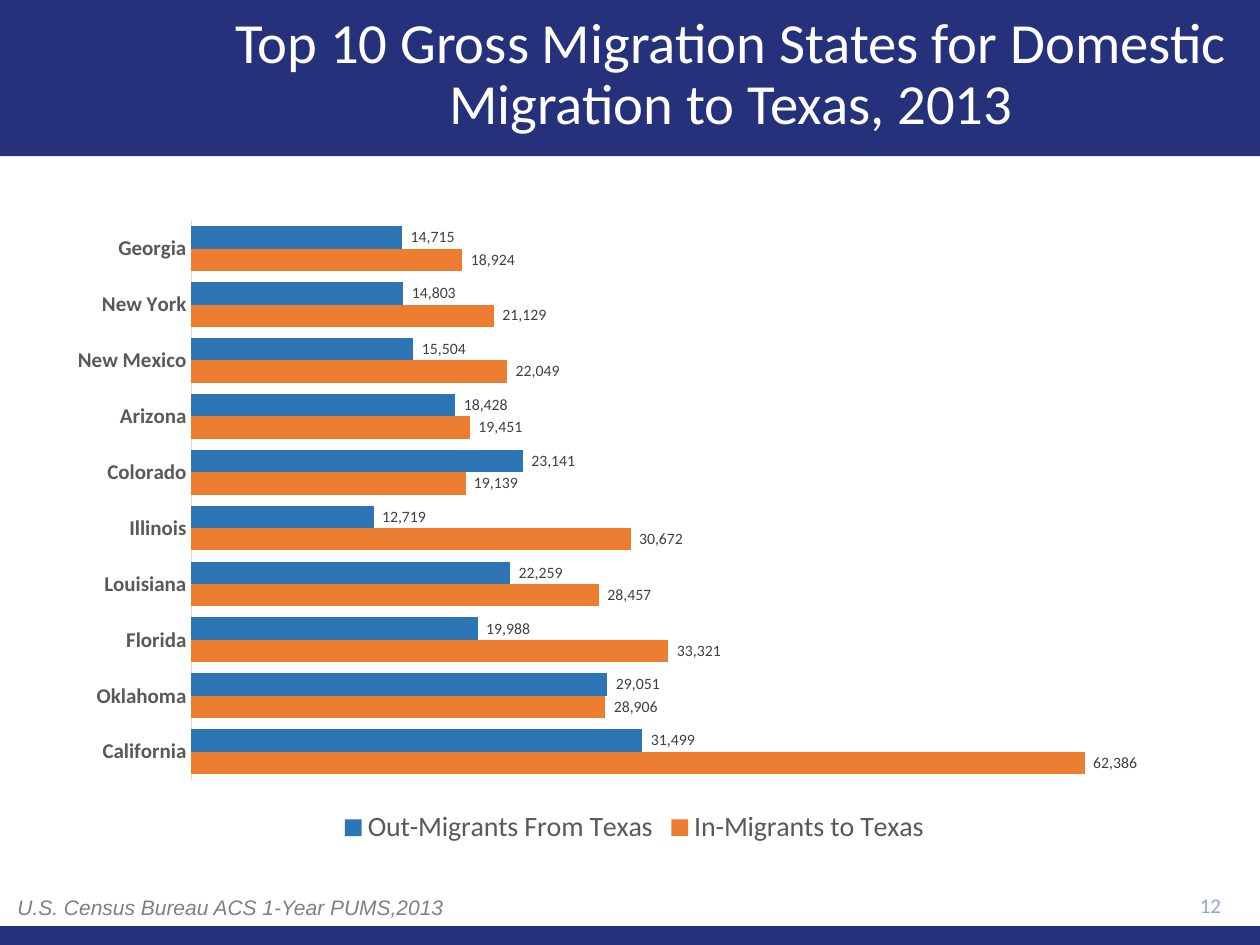
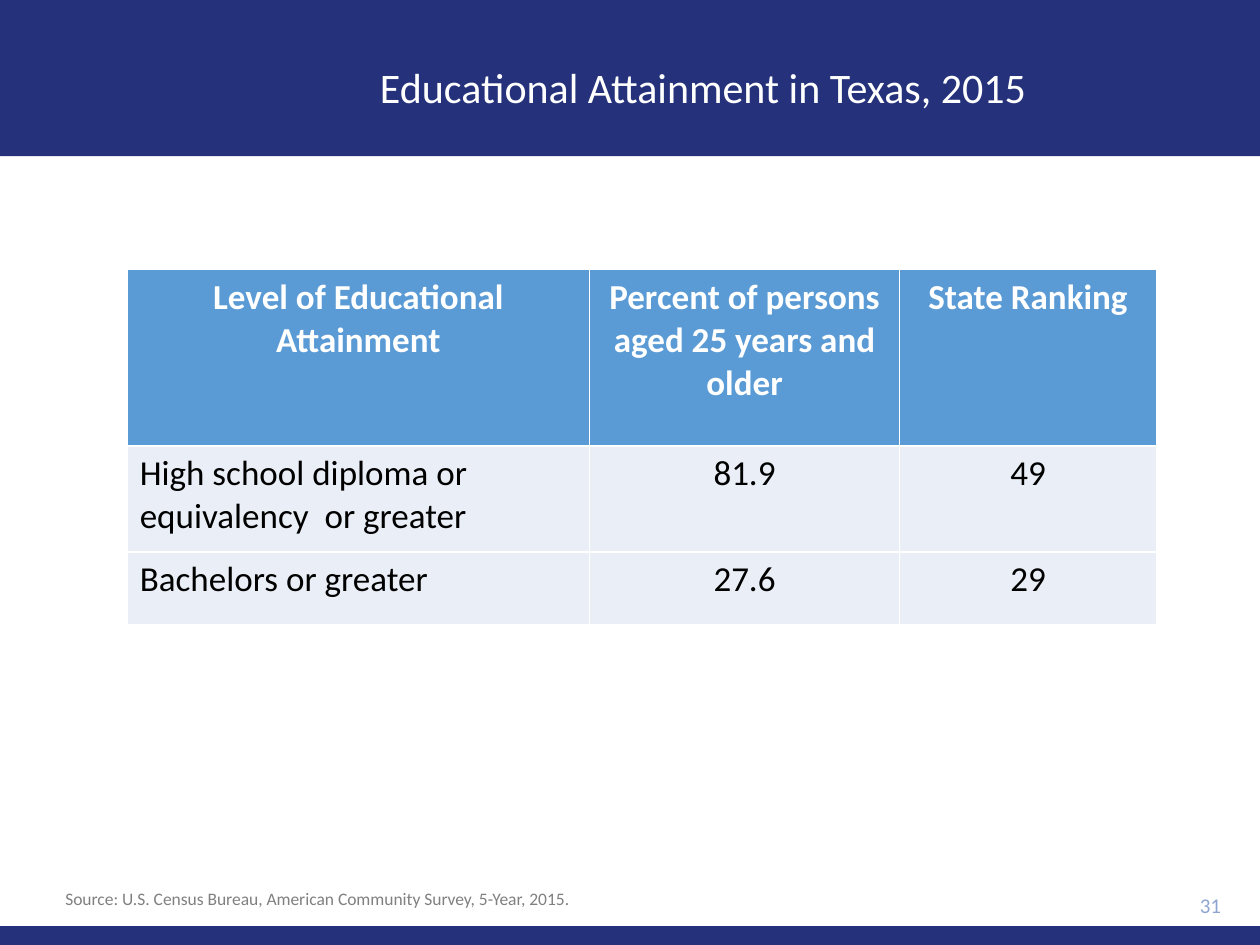
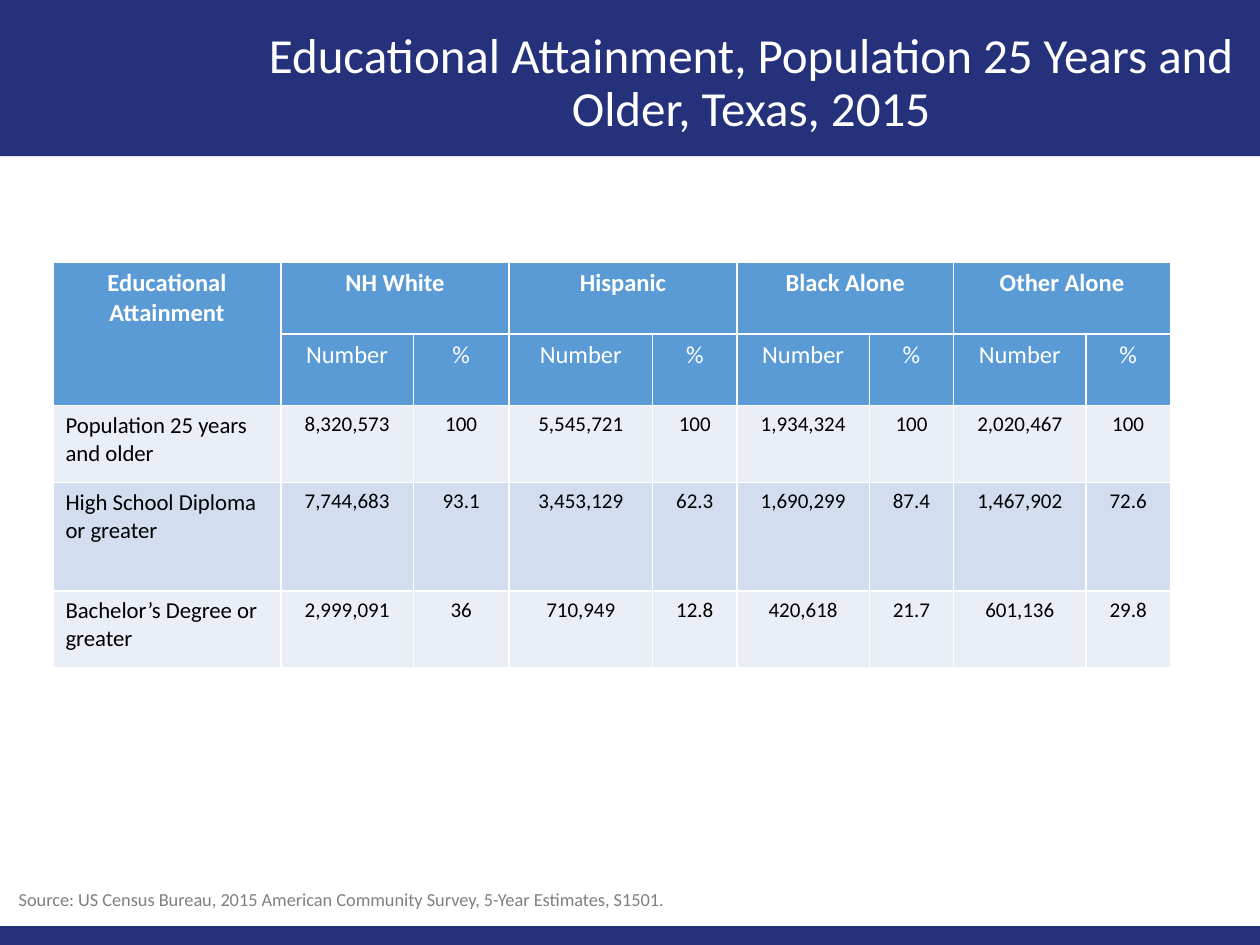
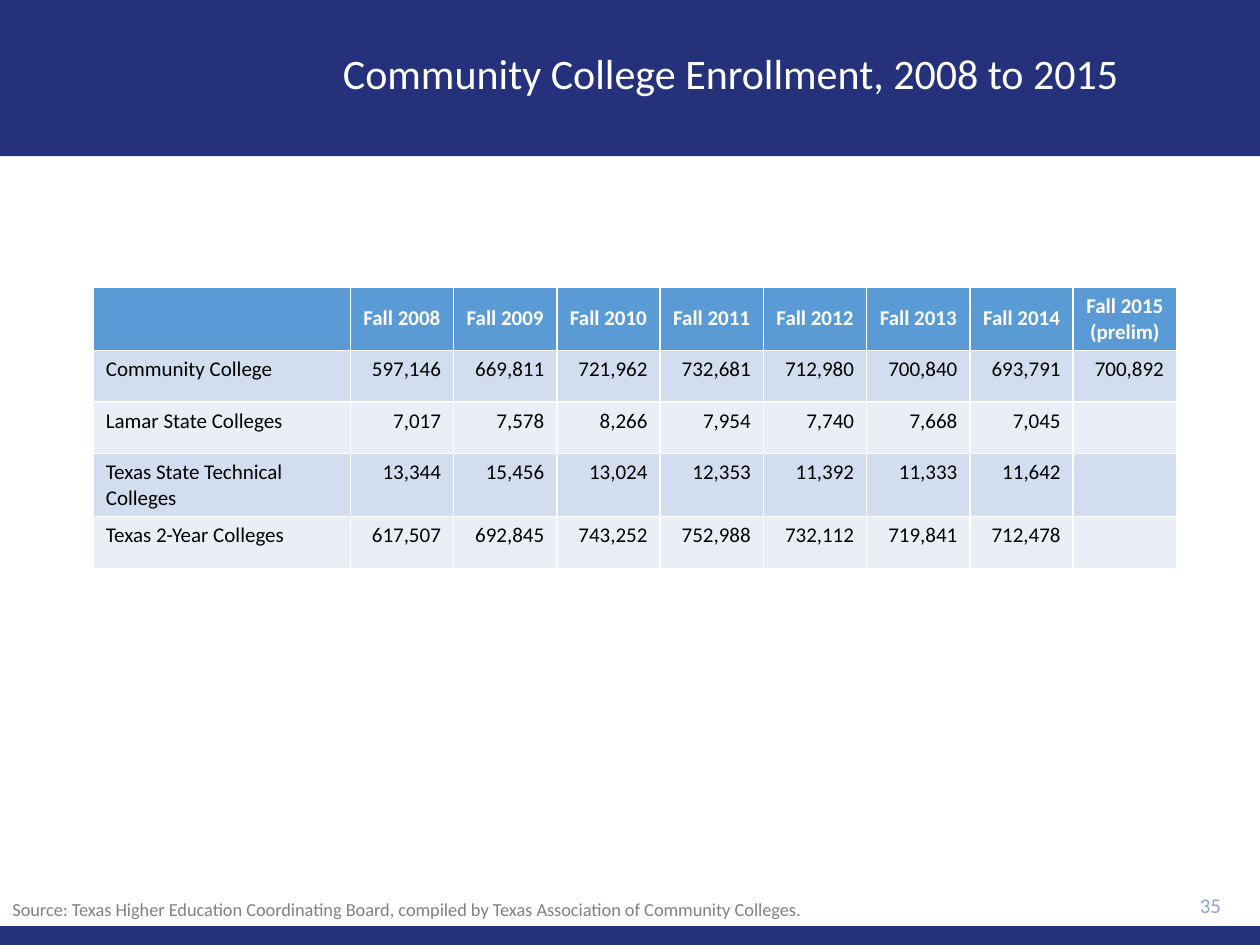
from dataclasses import dataclass

from lxml.etree import SubElement
from pptx import Presentation
from pptx.chart.data import CategoryChartData
from pptx.dml.color import RGBColor
from pptx.enum.chart import XL_CHART_TYPE as Kind
from pptx.enum.chart import XL_LABEL_POSITION as Spot
from pptx.enum.chart import XL_LEGEND_POSITION as Side
from pptx.enum.chart import XL_TICK_MARK as Tick
from pptx.enum.shapes import MSO_SHAPE as Form
from pptx.enum.text import MSO_ANCHOR as Anchor
from pptx.enum.text import MSO_AUTO_SIZE as Fit
from pptx.enum.text import PP_ALIGN as Align
from pptx.oxml.ns import qn
from pptx.util import Inches, Pt


@dataclass(frozen=True)
class Theme:
    font: str = "Calibri"
    note_font: str = "Arial"
    navy: str = "25327B"
    white: str = "FFFFFF"
    black: str = "000000"
    head: str = "5B9BD5"
    pale: str = "EAEFF7"
    mid: str = "D2DEEF"
    note: str = "808080"
    page: str = "8FA5D1"
    axis: str = "595959"
    rule: str = "D9D9D9"
    label: str = "404040"
    page_size: float = 12
    axis_size: float = 12
    legend_size: float = 16
    label_size: float = 9


T = Theme()
SIZE = (10, 7.5)
BANDS = [(0, 0, 10, 1.24), (0, 7.35, 10, 0.15)]
PAGE = (8.9, 7.01, 0.89, 0.34)
COUNT = '_(* #,##0_);_(* \\(#,##0\\);_(* "-"??_);_('

STATES = ["California", "Oklahoma", "Florida", "Louisiana", "Illinois",
          "Colorado", "Arizona", "New Mexico", "New York", "Georgia"]
FLOWS = [
    ("In-Migrants to Texas", "ED7D31",
     [62386, 28906, 33321, 28457, 30672, 19139, 19451, 22049, 21129, 18924]),
    ("Out-Migrants From Texas", "2E75B6",
     [31499, 29051, 19988, 22259, 12719, 23141, 18428, 15504, 14803, 14715]),
]
MOVES = dict(at=(0.41, 1.65, 9.25, 5.1), cats=STATES, flows=FLOWS,
             plot=dict(x=0.12, y=0.02, w=0.86, h=0.87))

LEVELS = dict(
    at=(1.01, 2.14), cols=[3.67, 2.46, 2.04], rows=[1.4, 0.84, 0.58],
    fills=[T.pale, T.pale], sizes=(20, 20, 20), align=Align.CENTER,
    cells=[
        ["Level of Educational Attainment",
         "Percent of persons aged 25 years and older", "State Ranking"],
        ["High school diploma or equivalency  or greater", "81.9", "49"],
        ["Bachelors or greater", "27.6", "29"],
    ])

GROUPS = dict(
    at=(0.42, 2.08), cols=[1.81, 1.05, 0.76, 1.14] + [0.67, 1.05] * 2 + [0.67],
    rows=[0.57, 0.57, 0.61, 0.86, 0.61], heads=2,
    fills=[T.pale, T.mid, T.pale], sizes=(14, 13, 12), align=Align.CENTER,
    spans=[(0, 0, 1, 0)] + [(0, col, 0, col + 1) for col in range(1, 9, 2)],
    cells=[
        ["Educational Attainment", "NH White", "", "Hispanic", "",
         "Black Alone", "", "Other Alone", ""],
        [""] + ["Number", "%"] * 4,
        ["Population 25 years and older", "8,320,573", "100", "5,545,721",
         "100", "1,934,324", "100", "2,020,467", "100"],
        ["High School Diploma or greater", "7,744,683", "93.1", "3,453,129",
         "62.3", "1,690,299", "87.4", "1,467,902", "72.6"],
        ["Bachelor’s Degree or greater", "2,999,091", "36", "710,949",
         "12.8", "420,618", "21.7", "601,136", "29.8"],
    ])

COLLEGES = dict(
    at=(0.74, 2.28), cols=[2.04] + [0.82] * 8, rows=[0.41] * 5,
    fills=[T.mid, T.pale] * 2, sizes=(12, 12, 12), align=Align.RIGHT,
    anchor=Anchor.MIDDLE,
    cells=[
        [""] + [f"Fall {year}" for year in range(2008, 2015)]
        + ["Fall 2015 (prelim)"],
        ["Community College", "597,146", "669,811", "721,962", "732,681",
         "712,980", "700,840", "693,791", "700,892"],
        ["Lamar State Colleges", "7,017", "7,578", "8,266", "7,954",
         "7,740", "7,668", "7,045", ""],
        ["Texas State Technical Colleges", "13,344", "15,456", "13,024",
         "12,353", "11,392", "11,333", "11,642", ""],
        ["Texas 2-Year Colleges", "617,507", "692,845", "743,252", "752,988",
         "732,112", "719,841", "712,478", ""],
    ])

SLIDES = [
    dict(title="Top 10 Gross Migration States for Domestic Migration to Texas, 2013",
         spot=(1.7, 0.1, 8.2, 1), size=32.4, page="12", chart=MOVES,
         note="U.S. Census Bureau ACS 1-Year PUMS,2013",
         foot=(0.04, 7.05, 5, 0.3),
         look=dict(size=12, name=T.note_font, italic=True)),
    dict(title="Educational Attainment in Texas, 2015",
         spot=(1.83, 0.17, 7.5, 1.08), size=24, page="31", table=LEVELS,
         note="Source: U.S. Census Bureau, American Community Survey, 5-Year, 2015.",
         foot=(0.42, 7, 5.67, 0.27), look=dict(size=10)),
    dict(title="Educational Attainment, Population 25 Years and Older, Texas, 2015",
         spot=(1.92, 0, 8.08, 1.33), size=28, table=GROUPS,
         note="Source: US Census Bureau, 2015 American Community Survey, "
              "5-Year Estimates, S1501.",
         foot=(0.05, 7, 9.22, 0.29), look=dict(size=10.5)),
    dict(title="Community College Enrollment, 2008 to 2015",
         spot=(1.7, 0.1, 8.2, 1), size=24, page="35", table=COLLEGES,
         note="Source: Texas Higher Education Coordinating Board, compiled by "
              "Texas Association of Community Colleges.",
         foot=(0, 7.08, 8.75, 0.28), look=dict(size=10.5)),
]


def inch(nums):
    return [Inches(num) for num in nums]


def tint(fill, color):
    fill.solid()
    fill.fore_color.rgb = RGBColor.from_string(color)


def style(font, size, color, name=T.font, bold=False, italic=False):
    font.size, font.name = Pt(size), name
    font.bold, font.italic = bold, italic
    font.color.rgb = RGBColor.from_string(color)


def write(frame, text, align=Align.LEFT, space=None, **look):
    para = frame.paragraphs[0]
    para.alignment, para.line_spacing = align, space
    run = para.add_run()
    run.text = text
    style(run.font, **look)


def label(slide, at, text, anchor=Anchor.TOP, grow=False, **look):
    frame = slide.shapes.add_textbox(*inch(at)).text_frame
    frame.word_wrap = True
    frame.auto_size = Fit.SHAPE_TO_FIT_TEXT if grow else Fit.NONE
    frame.vertical_anchor = anchor
    write(frame, text, **look)


def band(slide, at):
    bar = slide.shapes.add_shape(Form.RECTANGLE, *inch(at))
    bar.shadow.inherit = False
    tint(bar.fill, T.navy)
    bar.line.fill.background()


def grid(slide, at, cols, rows, cells, fills, sizes, align,
         heads=1, spans=(), anchor=Anchor.TOP):
    """Draw a table; sizes are for headings, first column and figures."""
    area = inch((*at, sum(cols), sum(rows)))
    table = slide.shapes.add_table(len(rows), len(cols), *area).table
    for col, width in zip(table.columns, inch(cols)):
        col.width = width
    for row, height in zip(table.rows, inch(rows)):
        row.height = height
    for top, left, low, right in spans:
        table.cell(top, left).merge(table.cell(low, right))
    tones = [T.head] * heads + fills
    for r, line in enumerate(cells):
        for c, text in enumerate(line):
            cell = table.cell(r, c)
            tint(cell.fill, tones[r])
            head = r < heads
            if head:
                cell.vertical_anchor = anchor
                size, side = sizes[0], Align.CENTER
            elif c == 0:
                size, side = sizes[1], Align.LEFT
            else:
                size, side = sizes[2], align
            if text:
                write(cell.text_frame, text, align=side, size=size,
                      color=T.white if head else T.black, bold=r == 0)


def place(chart, box):
    """Fix the inner plot area as fractions of the chart."""
    area = chart._chartSpace.chart.plotArea
    for old in area.findall(qn("c:layout")):
        area.remove(old)
    layout = SubElement(area, qn("c:layout"))
    area.insert(0, layout)
    manual = SubElement(layout, qn("c:manualLayout"))
    parts = dict(layoutTarget="inner", xMode="edge", yMode="edge", **box)
    for key, val in parts.items():
        SubElement(manual, qn("c:" + key)).set("val", str(val))


def bars(slide, at, cats, flows, plot):
    data = CategoryChartData(number_format=COUNT)
    data.categories = cats
    for name, _, vals in flows:
        data.add_series(name, vals)
    chart = slide.shapes.add_chart(Kind.BAR_CLUSTERED, *inch(at), data).chart
    chart.has_title = False
    style(chart.font, 10, T.black)
    chart.has_legend = True
    chart.legend.position = Side.BOTTOM
    chart.legend.include_in_layout = False
    style(chart.legend.font, T.legend_size, T.axis)
    cat, val = chart.category_axis, chart.value_axis
    cat.major_tick_mark = cat.minor_tick_mark = Tick.NONE
    style(cat.tick_labels.font, T.axis_size, T.axis, bold=True)
    tint(cat.format.line.fill, T.rule)
    cat.format.line.width = Pt(0.75)
    val.visible = val.has_major_gridlines = False
    val.minimum_scale, val.maximum_scale = 0, 70000
    val.tick_labels.number_format = COUNT
    val.tick_labels.number_format_is_linked = False
    group = chart.plots[0]
    group.gap_width, group.overlap = 50, 0
    group.vary_by_categories = False
    for series, (_, color, _) in zip(group.series, flows):
        tint(series.format.fill, color)
        tags = series.data_labels
        tags.show_value = True
        tags.position = Spot.OUTSIDE_END
        tags.number_format = COUNT
        tags.number_format_is_linked = False
        style(tags.font, T.label_size, T.label)
    place(chart, plot)


def build(deck, item):
    slide = deck.slides.add_slide(deck.slide_layouts[6])
    for at in BANDS:
        band(slide, at)
    label(slide, item["spot"], item["title"], anchor=Anchor.MIDDLE,
          align=Align.CENTER, space=0.9, size=item["size"], color=T.white)
    if "chart" in item:
        bars(slide, **item["chart"])
    if "table" in item:
        grid(slide, **item["table"])
    if "page" in item:
        label(slide, PAGE, item["page"], anchor=Anchor.MIDDLE,
              align=Align.RIGHT, size=T.page_size, color=T.page)
    label(slide, item["foot"], item["note"], grow=True, color=T.note,
          **item["look"])


def main():
    deck = Presentation()
    deck.slide_width, deck.slide_height = inch(SIZE)
    for item in SLIDES:
        build(deck, item)
    deck.save("out.pptx")


if __name__ == "__main__":
    main()
